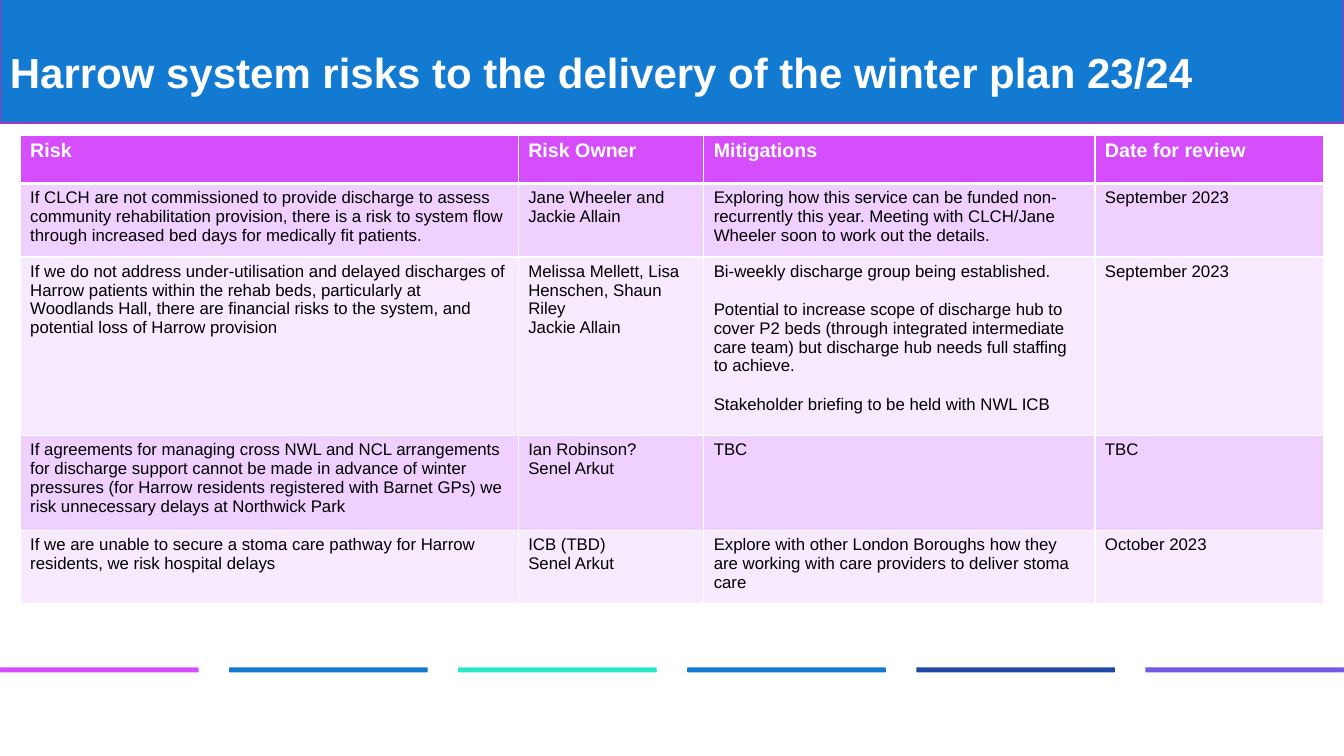
"""Builds the Harrow winter plan risk slide."""
from lxml import etree
from pptx import Presentation
from pptx.dml.color import RGBColor
from pptx.enum.shapes import MSO_SHAPE
from pptx.enum.text import MSO_ANCHOR
from pptx.oxml.ns import qn
from pptx.util import Inches, Pt

RECT, ROUND = MSO_SHAPE.RECTANGLE, MSO_SHAPE.ROUNDED_RECTANGLE
MIDDLE = MSO_ANCHOR.MIDDLE
WIDE, HIGH = 13.33, 7.5
HUES = {
    "blue": "127AD1", "pink": "D64DFC", "mint": "26E8C7", "navy": "1F47A8",
    "violet": "7359E5", "plum": "9E39BA", "dark": "F0D0FE", "pale": "F7E9FE",
    "white": "FFFFFF", "black": "000000",
}
STRIPES = ["pink", "blue", "mint", "blue", "navy", "violet"]
COLS = [4.94, 1.84, 3.88, 2.27]
ROWS = [0.48, 0.73, 1.77, 0.94, 0.73]
GAP = 13.8
RISKS = [
    ["Risk", "Risk Owner", "Mitigations", "Date for review"],
    ["If CLCH are not commissioned to provide discharge to assess community "
     "rehabilitation provision, there is a risk to system flow through "
     "increased bed days for medically fit patients.",
     "Jane Wheeler and Jackie Allain",
     "Exploring how this service can be funded non-recurrently this year. "
     "Meeting with CLCH/Jane Wheeler soon to work out the details.",
     "September 2023"],
    ["If we do not address under-utilisation and delayed discharges of Harrow "
     "patients within the rehab beds, particularly at Woodlands Hall, there "
     "are financial risks to the system, and potential loss of Harrow provision",
     "Melissa Mellett, Lisa Henschen, Shaun Riley\nJackie Allain",
     "Bi-weekly discharge group being established.\n"
     "Potential to increase scope of discharge hub to cover P2 beds (through "
     "integrated intermediate care team) but discharge hub needs full staffing "
     "to achieve.\nStakeholder briefing to be held with NWL ICB",
     "September 2023"],
    ["If agreements for managing cross NWL and NCL arrangements for discharge "
     "support cannot be made in advance of winter pressures (for Harrow "
     "residents registered with Barnet GPs) we risk unnecessary delays at "
     "Northwick Park",
     "Ian Robinson?\nSenel Arkut", "TBC", "TBC"],
    ["If we are unable to secure a stoma care pathway for Harrow residents, we "
     "risk hospital delays",
     "ICB (TBD)\nSenel Arkut",
     "Explore with other London Boroughs how they are working with care "
     "providers to deliver stoma care",
     "October 2023"],
]


def block(kind, hue, *box):
    form = slide.shapes.add_shape(kind, *map(Inches, box))
    form.shadow.inherit = False
    form.fill.solid()
    form.fill.fore_color.rgb = RGBColor.from_string(HUES[hue])
    form.line.fill.background()
    return form


def style(para, size, hue, bold):
    para.font.name = "Arial"
    para.font.size = Pt(size)
    para.font.bold = bold
    para.font.color.rgb = RGBColor.from_string(HUES[hue])


deck = Presentation()
deck.slide_width, deck.slide_height = Inches(WIDE), Inches(HIGH)
slide = deck.slides.add_slide(deck.slide_layouts[6])

banner = block(RECT, "blue", 0, -0.03, WIDE, 1.25)
banner.line.color.rgb = RGBColor.from_string(HUES["plum"])
banner.line.width = Pt(1)

bar = 1.97
step = (WIDE - bar) / (len(STRIPES) - 1)
for i, hue in enumerate(STRIPES):
    block(ROUND, hue, i * step, 6.62, bar, 0.05)

title = slide.shapes.add_textbox(0, Inches(0.02), Inches(13.13), Inches(1.45))
frame = title.text_frame
frame.word_wrap = True
frame.vertical_anchor = MIDDLE
frame.text = "Harrow system risks to the delivery of the winter plan 23/24"
frame.paragraphs[0].line_spacing = 0.9
style(frame.paragraphs[0], 30, "white", True)

table = slide.shapes.add_table(
    len(ROWS), len(COLS), Inches(0.2), Inches(1.34),
    Inches(sum(COLS)), Inches(sum(ROWS))).table
for col, width in zip(table.columns, COLS):
    col.width = Inches(width)
for row, height in zip(table.rows, ROWS):
    row.height = Inches(height)

for r, risk in enumerate(RISKS):
    head = r == 0
    fill = "pink" if head else "dark" if r % 2 else "pale"
    edges = {"L": 1, "R": 1, "T": 3 if r == 1 else 1, "B": 3 if head else 1}
    for c, words in enumerate(risk):
        cell = table.cell(r, c)
        cell.text = words
        cell.fill.solid()
        cell.fill.fore_color.rgb = RGBColor.from_string(HUES[fill])
        for n, para in enumerate(cell.text_frame.paragraphs):
            style(para, 14 if head else 12, "white" if head else "black", head)
            if n and c == 2:
                para.space_before = Pt(GAP)
        props = cell._tc.get_or_add_tcPr()
        for n, (side, width) in enumerate(edges.items()):
            line = etree.Element(qn(f"a:ln{side}"), w=str(Pt(width)))
            paint = etree.SubElement(line, qn("a:solidFill"))
            etree.SubElement(paint, qn("a:srgbClr"), val=HUES["white"])
            props.insert(n, line)

deck.save("out.pptx")
